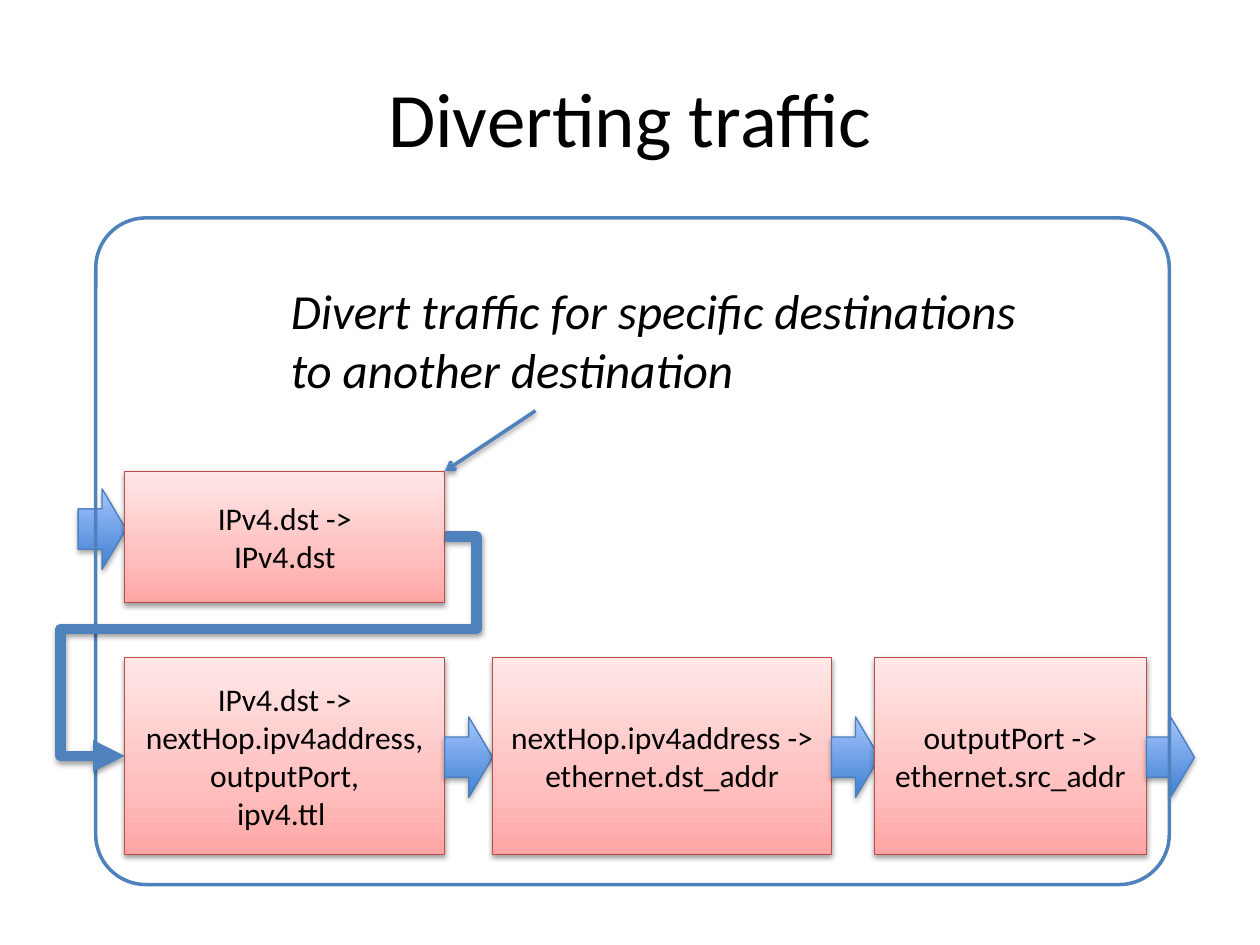
from dataclasses import dataclass

from lxml.etree import SubElement
from pptx import Presentation
from pptx.dml.color import RGBColor
from pptx.enum.shapes import MSO_CONNECTOR as Link, MSO_SHAPE as Shape
from pptx.enum.text import MSO_ANCHOR as Anchor, PP_ALIGN as Align
from pptx.oxml.ns import qn
from pptx.util import Inches, Pt


@dataclass(frozen=True)
class Theme:
    font: str = "Calibri"
    ink: str = "000000"
    accent: str = "4F81BD"
    stage_line: str = "BF4C48"
    stage_fill: tuple = ((0, "FFA6A5"), (35, "FFC0BF"), (100, "FFE7E7"))
    flow_line: str = "4B7EBC"
    flow_fill: tuple = ((0, "3F80CE"), (100, "A4C4FF"))
    title_size: int = 44
    note_size: int = 28
    stage_size: int = 18


THEME = Theme()
STAGE_LEFT = 0.99
STAGE_TOP = 5.22
STAGE_HEIGHT = 1.56
DIVERT_TOP = 3.74
DIVERT_HEIGHT = 1.04
FIRST_WIDTH = 2.54
FLOW_WIDTH, FLOW_HEIGHT = 0.38, 0.64
FLOW_TOP = 5.69
STAGES = (
    (STAGE_LEFT, FIRST_WIDTH,
     ("IPv4.dst ->", "nextHop.ipv4address,", "outputPort,", "ipv4.ttl ")),
    (3.91, 2.69, ("nextHop.ipv4address ->", "ethernet.dst_addr")),
    (6.94, 2.16, ("outputPort ->", "ethernet.src_addr")),
)


def inches(values):
    return [Inches(value) for value in values]


def write(frame, paragraphs, *, size, italic=False, align=Align.CENTER,
          anchor=Anchor.MIDDLE, wrap=True):
    frame.word_wrap = wrap
    frame.vertical_anchor = anchor
    for index, content in enumerate(paragraphs):
        paragraph = frame.add_paragraph() if index else frame.paragraphs[0]
        paragraph.text = content
        paragraph.alignment = align
        for run in paragraph.runs:
            run.font.name = THEME.font
            run.font.size = Pt(size)
            run.font.italic = italic
            run.font.color.rgb = RGBColor.from_string(THEME.ink)


def set_line(line, color, width):
    line.color.rgb = RGBColor.from_string(color)
    line.width = Pt(width)


def add_shadow(effects, alpha, distance):
    shadow = SubElement(effects, qn("a:outerShdw"), blurRad=str(Pt(3.1)),
                        dist=str(Pt(distance)), dir="5400000", rotWithShape="0")
    color = SubElement(shadow, qn("a:srgbClr"), val=THEME.ink)
    SubElement(color, qn("a:alpha"), val=str(alpha * 1000))


def add_gradient_shape(slide, kind, box, stops, outline, alpha, distance):
    shape = slide.shapes.add_shape(kind, *inches(box))
    shape.fill.gradient()
    shape.fill.gradient_angle = 90
    properties = shape._element.spPr
    stop_list = properties.find(".//" + qn("a:gsLst"))
    for old_stop in list(stop_list):
        stop_list.remove(old_stop)
    for position, color in stops:
        stop = SubElement(stop_list, qn("a:gs"), pos=str(position * 1000))
        SubElement(stop, qn("a:srgbClr"), val=color)
    set_line(shape.line, outline, 0.75)
    shape.shadow.inherit = False
    add_shadow(properties.find(qn("a:effectLst")), alpha, distance)
    return shape


def add_stage(slide, box, lines):
    stage = add_gradient_shape(slide, Shape.RECTANGLE, box, THEME.stage_fill,
                               THEME.stage_line, 38, 1.6)
    write(stage.text_frame, lines, size=THEME.stage_size)
    return stage


def add_flow(slide, left, top):
    add_gradient_shape(slide, Shape.RIGHT_ARROW,
                       (left, top, FLOW_WIDTH, FLOW_HEIGHT), THEME.flow_fill,
                       THEME.flow_line, 35, 1.8)


def add_frame(slide):
    frame = slide.shapes.add_shape(Shape.ROUNDED_RECTANGLE,
                                   *inches((0.76, 1.73, 8.52, 5.29)))
    frame.adjustments[0] = 0.075
    frame.fill.background()
    set_line(frame.line, THEME.accent, 2)
    frame.shadow.inherit = False


def add_link(slide, kind, start, end, width, head):
    link = slide.shapes.add_connector(kind, *inches((*start, *end)))
    set_line(link.line, THEME.accent, width)
    properties = link._element.spPr
    SubElement(properties.find(qn("a:ln")), qn("a:tailEnd"), type=head)
    add_shadow(SubElement(properties, qn("a:effectLst")), 38, 1.6)
    return link


def route_around(link, bends):
    geometry = link._element.spPr.find(qn("a:prstGeom"))
    geometry.set("prst", "bentConnector5")
    guides = geometry.find(qn("a:avLst"))
    if guides is None:
        guides = SubElement(geometry, qn("a:avLst"))
    for number, bend in enumerate(bends, start=1):
        SubElement(guides, qn("a:gd"), name=f"adj{number}",
                   fmla=f"val {round(bend * 100000)}")


def add_text(slide, box, content, **style):
    label = slide.shapes.add_textbox(*inches(box))
    write(label.text_frame, [content], **style)


def main():
    deck = Presentation()
    deck.slide_width, deck.slide_height = inches((10, 7.5))
    slide = deck.slides.add_slide(deck.slide_layouts[6])

    add_text(slide, (0.5, 0.3, 9, 1.25), "Diverting traffic",
             size=THEME.title_size)

    add_flow(slide, 0.62, 3.88)
    for left, width, lines in STAGES:
        add_stage(slide, (left, STAGE_TOP, width, STAGE_HEIGHT), lines)
        add_flow(slide, left + width, FLOW_TOP)

    add_frame(slide)
    add_stage(slide, (STAGE_LEFT, DIVERT_TOP, FIRST_WIDTH, DIVERT_HEIGHT),
              ("IPv4.dst ->", "IPv4.dst"))

    divert_right = STAGE_LEFT + FIRST_WIDTH
    detour = add_link(slide, Link.ELBOW,
                      (divert_right, DIVERT_TOP + DIVERT_HEIGHT / 2),
                      (STAGE_LEFT, STAGE_TOP + STAGE_HEIGHT / 2), 6, "triangle")
    route_around(detour, (-0.1, 0.42, 1.2))

    add_text(slide, (2.21, 2.18, 6.13, 1.04),
             "Divert traffic for specific destinations\nto another destination",
             size=THEME.note_size, italic=True, align=Align.LEFT,
             anchor=Anchor.TOP, wrap=False)
    add_link(slide, Link.STRAIGHT, (4.25, 3.26), (divert_right, DIVERT_TOP),
             2, "arrow")

    deck.save("out.pptx")


if __name__ == "__main__":
    main()
